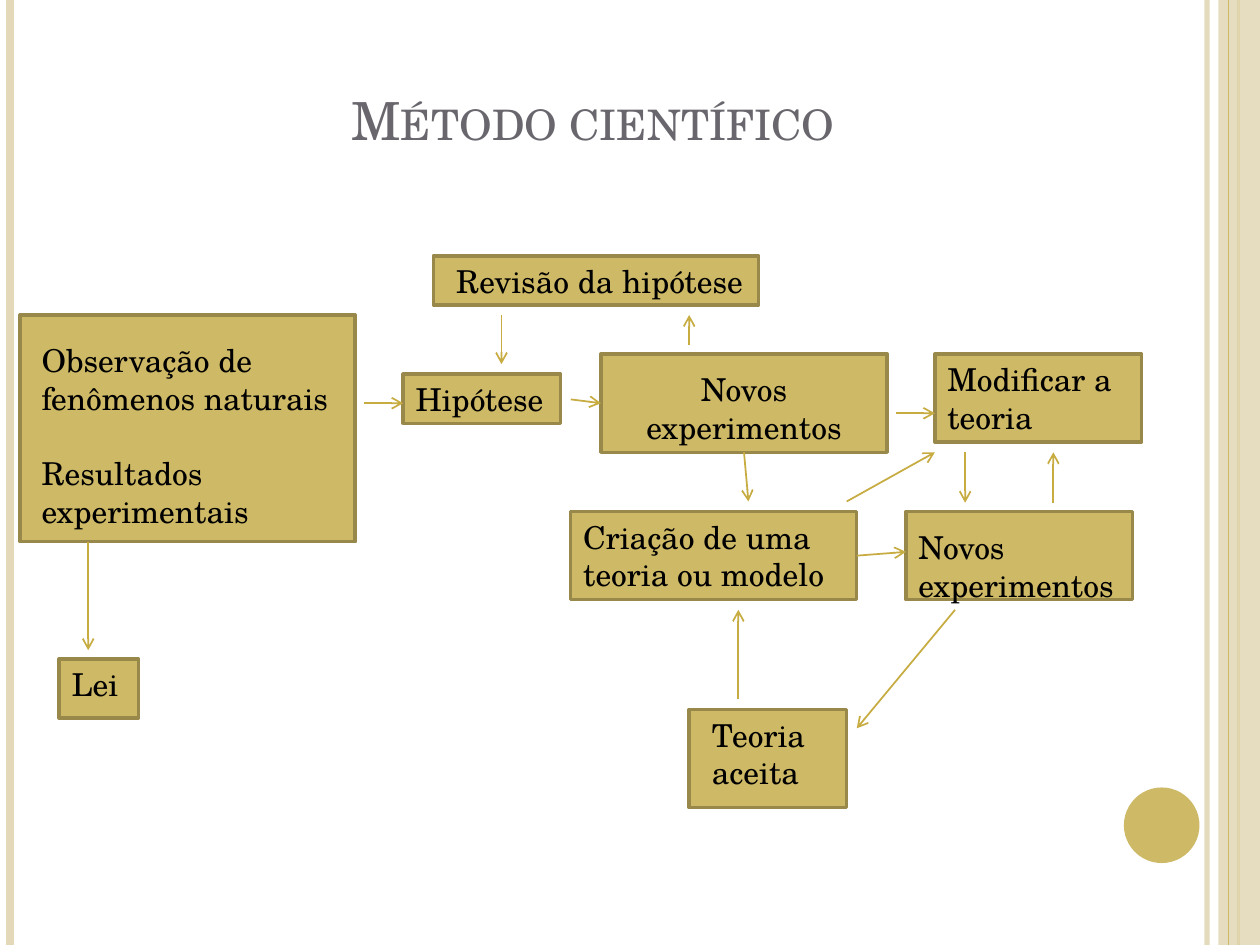
from pptx import Presentation
from pptx.dml.color import RGBColor
from pptx.enum.shapes import MSO_CONNECTOR as Connector, MSO_SHAPE as Shape
from pptx.enum.text import MSO_ANCHOR as Anchor, PP_ALIGN as Align
from pptx.oxml.ns import qn
from pptx.util import Inches, Pt
from lxml.etree import SubElement

FONT = "TeX Gyre Schola"
GOLD, PALE_GOLD, DARK_GOLD, ARROW_GOLD = "CEB966", "E3D9B8", "98894B", "C7AC41"
TITLE_GREY, BLACK = "69676D", "000000"
BOTTOM, LEFT, RIGHT = 2, 1, 3

# name: (left, top, width, height), paragraphs, text offset (x, y), alignment
BOXES = {
    "theory accepted": ((5.47, 5.63, 1.25, 0.78), ["Teoria aceita"], (0.08, 0), Align.LEFT),
    "later tests": ((7.19, 4.06, 1.8, 0.7), ["Novos experimentos"], (0, 0.08), Align.LEFT),
    "theory": ((4.53, 4.06, 2.27, 0.7), ["Criação de uma teoria ou modelo"], (0, 0), Align.LEFT),
    "modify": ((7.42, 2.81, 1.64, 0.7), ["Modificar a teoria"], (0, 0), Align.LEFT),
    "tests": ((4.77, 2.81, 2.27, 0.78), ["Novos experimentos"], (0, 0.08), Align.CENTER),
    "hypothesis": ((3.2, 2.97, 1.25, 0.39), ["Hipótese"], (0, 0), Align.LEFT),
    "revision": ((3.44, 2.03, 2.58, 0.39), ["Revisão da hipótese"], (0.08, 0), Align.LEFT),
    "law": ((0.47, 5.23, 0.63, 0.47), ["Lei"], (0, 0), Align.LEFT),
    "observation": ((0.16, 2.5, 2.66, 1.8),
                    ["Observação de fenômenos naturais", "Resultados experimentais"],
                    (0.07, 0.16), Align.LEFT),
}

# start, end: a point, or a (box name, side) pair where the arrow is joined
ARROWS = [
    ((2.89, 3.2), (3.2, 3.2)),
    ((4.53, 3.17), ("tests", LEFT)),
    ((7.11, 3.28), (7.42, 3.28)),
    ((0.7, 4.3), (0.7, 5.16)),
    ((3.98, 2.5), (3.98, 2.89)),
    ((5.47, 2.74), (5.47, 2.5)),
    (("tests", BOTTOM), (5.94, 3.98)),
    (("theory", RIGHT), (7.19, 4.38)),
    ((8.36, 3.99), (8.36, 3.59)),
    ((6.72, 3.98), (7.42, 3.59)),
    ((7.58, 4.84), (6.8, 5.78)),
    ((5.86, 5.55), (5.86, 4.84)),
    ((7.66, 3.59), (7.66, 3.99)),
]


def color(value):
    return RGBColor.from_string(value)


def set_alpha(shape, percent):
    """Make every solid colour of the shape's fill and line translucent."""
    for node in shape._element.spPr.iter(qn("a:srgbClr")):
        SubElement(node, qn("a:alpha")).set("val", str(percent * 1000))


def format_runs(paragraph, size, font_color):
    for run in paragraph.runs:
        run.font.name = FONT
        run.font.size = Pt(size)
        run.font.color.rgb = color(font_color)


def add_filled(slide, kind, box, fill):
    shape = slide.shapes.add_shape(kind, *map(Inches, box))
    shape.shadow.inherit = False
    shape.fill.solid()
    shape.fill.fore_color.rgb = color(fill)
    shape.line.fill.background()
    return shape


def add_line(slide, start, end, line_color, width):
    line = slide.shapes.add_connector(Connector.STRAIGHT, *map(Inches, (*start, *end)))
    line.line.color.rgb = color(line_color)
    line.line.width = Pt(width)
    SubElement(line._element.spPr, qn("a:effectLst"))
    return line


def add_decoration(slide, width, height):
    def stripe(x, line_color, weight):
        return add_line(slide, (x, 0), (x, height), line_color, weight)

    set_alpha(stripe(width - 0.42, PALE_GOLD, 3), 93)
    stripe(0.08, PALE_GOLD, 4.5)
    stripe(width - 0.17, GOLD, 1.5)
    band = add_filled(slide, Shape.RECTANGLE, (width - 0.33, 0, 0.33, height), PALE_GOLD)
    set_alpha(band, 87)
    stripe(width - 0.25, GOLD, 0.75)
    add_filled(slide, Shape.OVAL, (width - 1.08, height - 1.25, 0.6, 0.6), GOLD)


def add_title(slide, box, text):
    text_frame = slide.shapes.add_textbox(*map(Inches, box)).text_frame
    text_frame.word_wrap = True
    text_frame.vertical_anchor = Anchor.BOTTOM
    text_frame.text = text
    paragraph = text_frame.paragraphs[0]
    paragraph.alignment = Align.CENTER
    format_runs(paragraph, 30, TITLE_GREY)
    paragraph.runs[0]._r.get_or_add_rPr().set("cap", "small")


def add_step(slide, box, paragraphs, offset, alignment):
    shape = add_filled(slide, Shape.RECTANGLE, box, GOLD)
    shape.line.color.rgb = color(DARK_GOLD)
    shape.line.width = Pt(2)
    text_frame = shape.text_frame
    text_frame.word_wrap = True
    text_frame.vertical_anchor = Anchor.TOP
    text_frame.margin_left = Inches(0.1 + offset[0])
    text_frame.margin_top = Inches(0.05 + offset[1])
    text_frame.margin_right = Inches(0.1 if alignment == Align.CENTER else 0.02)
    text_frame.margin_bottom = 0
    text_frame.text = "\n".join(paragraphs)
    for index, paragraph in enumerate(text_frame.paragraphs):
        paragraph.alignment = alignment
        paragraph.space_before = Pt(21 if index else 0)
        format_runs(paragraph, 18, BLACK)
    return shape


def add_arrow(slide, start, end, steps):
    def is_joined(place):
        return place[0] in steps

    points = [(0, 0) if is_joined(place) else place for place in (start, end)]
    arrow = add_line(slide, *points, ARROW_GOLD, 1)
    if is_joined(start):
        arrow.begin_connect(steps[start[0]], start[1])
    if is_joined(end):
        arrow.end_connect(steps[end[0]], end[1])
    SubElement(arrow.line._get_or_add_ln(), qn("a:tailEnd")).set("type", "arrow")


def add_flowchart(slide):
    steps = {name: add_step(slide, *details) for name, details in BOXES.items()}
    for start, end in ARROWS:
        add_arrow(slide, start, end, steps)


def main():
    width, height = 10, 7.5
    presentation = Presentation()
    presentation.slide_width, presentation.slide_height = Inches(width), Inches(height)
    slide = presentation.slides.add_slide(presentation.slide_layouts[6])
    add_decoration(slide, width, height)
    add_title(slide, (0.62, 0, 8.17, 1.25), "Método científico")
    add_flowchart(slide)
    presentation.save("out.pptx")


if __name__ == "__main__":
    main()
